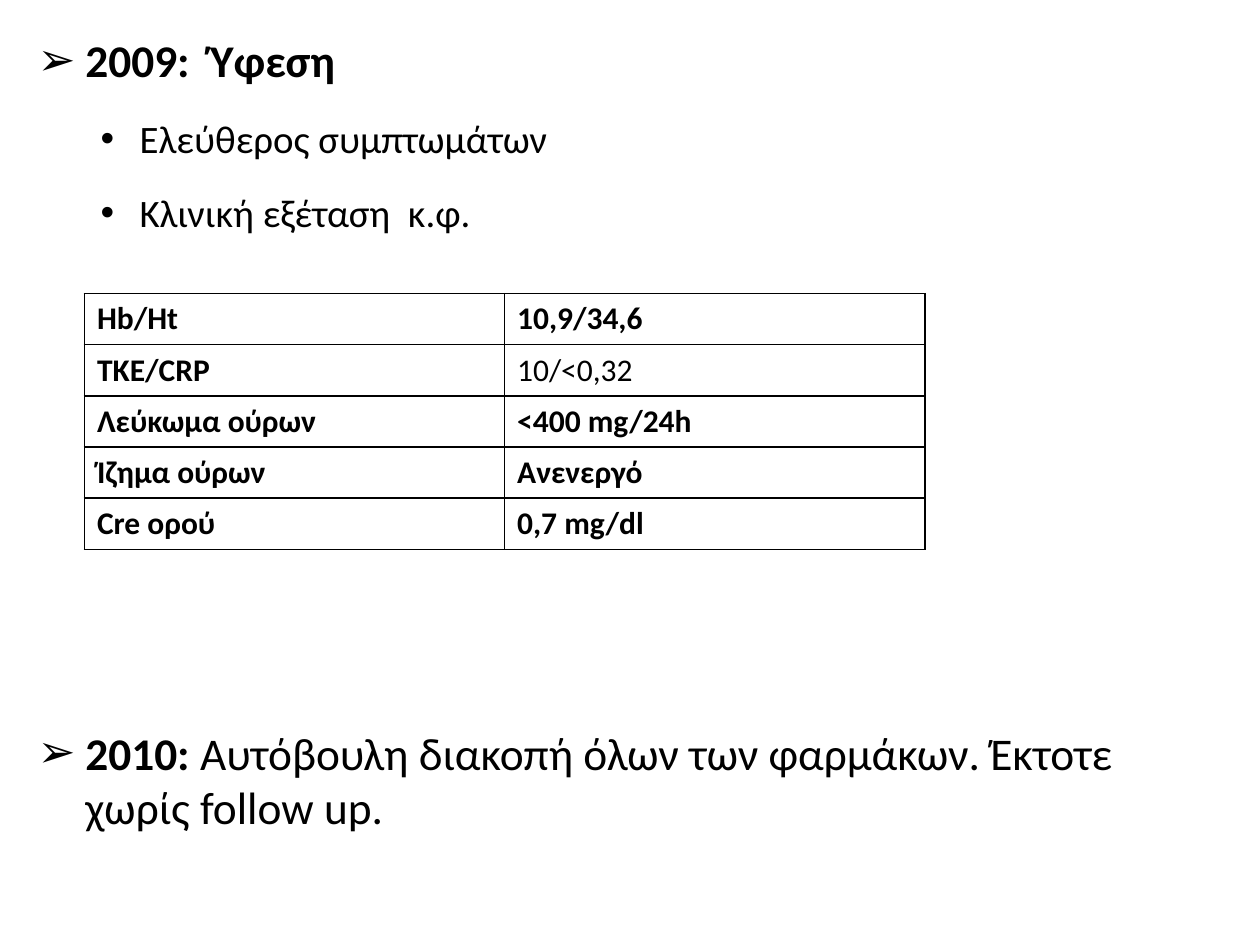
from lxml.etree import SubElement
from pptx import Presentation
from pptx.dml.color import RGBColor
from pptx.oxml.ns import qn
from pptx.util import Inches, Pt

FONT = "Calibri"
COLORS = {"text": "000000", "border": "000000"}

YEAR_LEVEL = {"size": 25.9, "indent": 0.38, "hanging": 0.38, "bullet": "➢", "spacing": 1.0}
FINDING_LEVEL = {"size": 22.2, "indent": 0.81, "hanging": 0.31, "bullet": "•", "spacing": 1.4}
TABLE_GAP = 280  # points kept free between the findings and the 2010 entry

# Level, space before in points, runs as (text, bold)
COURSE = [
    (YEAR_LEVEL, 5, [("2009:  Ύφεση", True)]),
    (FINDING_LEVEL, 5, [("Ελεύθερος συμπτωμάτων", False)]),
    (FINDING_LEVEL, 5, [("Κλινική εξέταση  κ.φ.", False)]),
    (YEAR_LEVEL, TABLE_GAP, [
        ("2010: ", True),
        ("Αυτόβουλη διακοπή όλων των φαρμάκων. Έκτοτε χωρίς follow up.", False),
    ]),
]

LAB_RESULTS = [
    ("Hb/Ht", "10,9/34,6"),
    ("ΤΚΕ/CRP", "10/<0,32"),
    ("Λεύκωμα ούρων", "<400 mg/24h"),
    ("Ίζημα ούρων", "Ανενεργό"),
    ("Cre ορού", "0,7 mg/dl"),
]
NORMAL_WEIGHT = {"10/<0,32"}


def style_run(run, size, bold):
    run.font.name = FONT
    run.font.size = Pt(size)
    run.font.bold = bold
    run.font.color.rgb = RGBColor.from_string(COLORS["text"])


def set_bullet(paragraph, level):
    properties = paragraph._p.get_or_add_pPr()
    properties.set("marL", str(Inches(level["indent"])))
    properties.set("indent", str(-Inches(level["hanging"])))
    SubElement(properties, qn("a:buFont"), typeface="Arial")
    SubElement(properties, qn("a:buChar"), char=level["bullet"])


def set_borders(cell, width):
    properties = cell._tc.get_or_add_tcPr()
    for position, side in enumerate(("a:lnL", "a:lnR", "a:lnT", "a:lnB")):
        line = properties.makeelement(qn(side), {"w": str(Pt(width))})
        fill = SubElement(line, qn("a:solidFill"))
        SubElement(fill, qn("a:srgbClr"), val=COLORS["border"])
        properties.insert(position, line)


def add_course(slide, left, top, width, height):
    frame = slide.shapes.add_textbox(left, top, width, height).text_frame
    frame.word_wrap = True
    for index, (level, space_before, runs) in enumerate(COURSE):
        paragraph = frame.paragraphs[0] if index == 0 else frame.add_paragraph()
        paragraph.space_before = Pt(space_before)
        paragraph.line_spacing = level["spacing"]
        set_bullet(paragraph, level)
        for text, bold in runs:
            run = paragraph.add_run()
            run.text = text
            style_run(run, level["size"], bold)


def add_lab_results(slide, left, top, width, height):
    table = slide.shapes.add_table(
        len(LAB_RESULTS), len(LAB_RESULTS[0]), left, top, width, height
    ).table
    table.first_row = False
    table.horz_banding = False
    for row, result in enumerate(LAB_RESULTS):
        for column, text in enumerate(result):
            cell = table.cell(row, column)
            cell.fill.background()
            set_borders(cell, 1)
            paragraph = cell.text_frame.paragraphs[0]
            paragraph.text = text
            style_run(paragraph.runs[0], 18, text not in NORMAL_WEIGHT)


def main():
    presentation = Presentation()
    presentation.slide_width = Inches(10)
    presentation.slide_height = Inches(7.5)
    slide = presentation.slides.add_slide(presentation.slide_layouts[6])
    add_course(slide, Inches(0.2), Inches(0.21), Inches(9), Inches(6.46))
    add_lab_results(slide, Inches(0.67), Inches(2.33), Inches(6.67), Inches(2.03))
    presentation.save("out.pptx")


if __name__ == "__main__":
    main()
